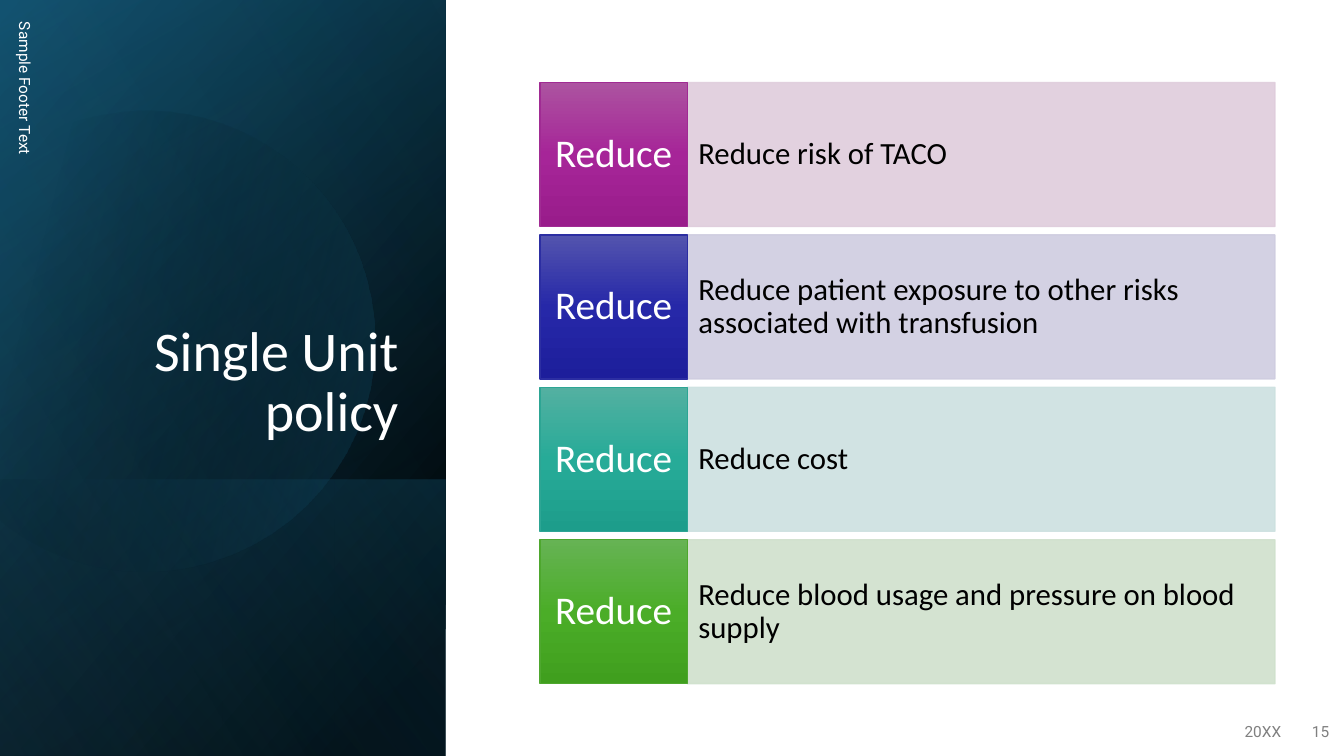
from math import cos, radians, sin

from lxml.etree import SubElement
from pptx import Presentation
from pptx.dml.color import RGBColor
from pptx.enum.shapes import MSO_SHAPE
from pptx.enum.text import MSO_ANCHOR, MSO_AUTO_SIZE, PP_ALIGN
from pptx.oxml.ns import qn
from pptx.util import Cm, Pt

COLORS = {
    "white": "FFFFFF", "black": "000000", "gray": "808080",
    "navy": "104862", "teal": "156082", "sky": "46B1E1",
}

# Text, pale body colour, label line colour, label gradient colours
ROWS = [
    ("Reduce risk of TACO",
     "DFCDDC", "A02B93", ("AC53A0", "A62598", "991C8B")),
    ("Reduce patient exposure to other risks associated with transfusion",
     "CFCDE0", "2C2EA2", ("5354AE", "2628A8", "1D1E9B")),
    ("Reduce cost",
     "CDE1E0", "2DA594", ("53B0A1", "27AB98", "1D9D8B")),
    ("Reduce blood usage and pressure on blood supply",
     "D0E1CD", "4EA72E", ("66B354", "4BAD28", "409F1E")),
]
ROW_TOP, ROW_HEIGHT, ROW_PITCH = 2.08, 3.63, 3.84
LABEL_LEFT, LABEL_WIDTH, BODY_WIDTH = 13.61, 3.71, 14.81

# Each step holds one end point, or two control points and an end point
CIRCLE_START = (3.78, 2.79)
CIRCLE_STEPS = [
    [(6.25, 2.84), (8.51, 4.5), (9.22, 6.99)],
    [(10.11, 10.08), (8.33, 13.28), (5.26, 14.17)],
    [(3.33, 14.73), (1.35, 14.25), (-0.08, 13.06)],
    [(-0.38, 12.78)],
    [(-0.38, 4.45)],
    [(0, 4.09)],
    [(0.58, 3.61), (1.27, 3.25), (2.03, 3.02)],
    [(2.62, 2.87), (3.2, 2.79), CIRCLE_START],
]
CIRCLE_CENTER = (4.03, 8.5)
CIRCLE_TILT = -16.1


def set_alpha(color_element, percent):
    SubElement(color_element, qn("a:alpha")).set("val", str(percent * 1000))


def fill_gradient(shape, stops, angle):
    """Fill with (position, colour, opacity) stops at a clockwise angle."""
    shape.fill.gradient()
    shape.fill.gradient_angle = (360 - angle) % 360
    stop_list = next(shape.element.spPr.iter(qn("a:gsLst")))
    for old_stop in list(stop_list):
        stop_list.remove(old_stop)
    for position, color, opacity in stops:
        stop = SubElement(stop_list, qn("a:gs"))
        stop.set("pos", str(position * 1000))
        color_element = SubElement(stop, qn("a:srgbClr"))
        color_element.set("val", color)
        if opacity < 100:
            set_alpha(color_element, opacity)


def write_text(shape, text, *, size, color, font="Calibri", align=PP_ALIGN.LEFT,
               anchor=MSO_ANCHOR.MIDDLE, insets=(0.25, 0.13), line_spacing=None):
    frame = shape.text_frame
    frame.word_wrap = True
    frame.auto_size = MSO_AUTO_SIZE.NONE
    frame.vertical_anchor = anchor
    frame.margin_left = frame.margin_right = Cm(insets[0])
    frame.margin_top = frame.margin_bottom = Cm(insets[1])
    para = frame.paragraphs[0]
    para.alignment = align
    para.line_spacing = line_spacing
    span = para.add_run()
    span.text = text
    span.font.size = Pt(size)
    span.font.name = font
    span.font.color.rgb = RGBColor.from_string(color)


def add_rectangle(page, left, top, width, height):
    box = page.shapes.add_shape(
        MSO_SHAPE.RECTANGLE, Cm(left), Cm(top), Cm(width), Cm(height))
    box.shadow.inherit = False
    return box


def add_panel(page, left, top, width, height, stops, angle):
    """Add a borderless gradient panel, mirrored and turned a quarter."""
    panel = add_rectangle(page, left, top, width, height)
    panel.rotation = 90
    panel.element.spPr.xfrm.set("flipH", "1")
    panel.line.fill.background()
    fill_gradient(panel, stops, angle)


def circle_points():
    points = [CIRCLE_START]
    for step in CIRCLE_STEPS:
        if len(step) == 1:
            points += step
            continue
        curve = [points[-1], *step]
        for index in range(1, 17):
            t = index / 16
            weights = ((1 - t) ** 3, 3 * t * (1 - t) ** 2, 3 * t * t * (1 - t), t ** 3)
            points.append(tuple(sum(weight * point[axis] for weight, point
                                    in zip(weights, curve)) for axis in (0, 1)))
    return points


def turn(point, center, degrees):
    angle = radians(degrees)
    x, y = point[0] - center[0], point[1] - center[1]
    return (Cm(center[0] + x * cos(angle) - y * sin(angle)),
            Cm(center[1] + x * sin(angle) + y * cos(angle)))


def add_circle(page):
    points = [turn(point, CIRCLE_CENTER, -CIRCLE_TILT) for point in circle_points()]
    builder = page.shapes.build_freeform(*points[0])
    builder.add_line_segments(points[1:], close=True)
    circle = builder.convert_to_shape()
    circle.rotation = CIRCLE_TILT
    circle.shadow.inherit = False
    circle.line.fill.background()
    fill_gradient(circle, [(29, COLORS["black"], 0), (100, COLORS["teal"], 43)], 30)


def add_side_panel(page):
    black, teal = COLORS["black"], COLORS["teal"]
    full = (-3.91, 3.91, 19.05, 11.23)
    add_panel(page, *full, [(8, black, 100), (100, COLORS["navy"], 100)], 50)
    add_panel(page, *full, [(0, black, 0), (99, teal, 46)], 30)
    add_panel(page, 2.13, 9.96, 6.96, 11.23, [(2, teal, 29), (100, black, 30)], 130)
    add_circle(page)
    add_panel(page, *full, [(0, black, 0), (99, COLORS["sky"], 11)], 120)


def add_title(page):
    title = page.shapes.title
    title.left, title.top, title.width, title.height = (
        Cm(1.63), Cm(4.67), Cm(8.66), Cm(6.65))
    write_text(title, "Single Unit policy", size=40, color=COLORS["white"],
               align=PP_ALIGN.RIGHT, anchor=MSO_ANCHOR.BOTTOM, line_spacing=0.9)
    page.shapes._spTree.append(title.element)  # bring in front of the panel


def add_footer(page, text, left, top, width, color, align=PP_ALIGN.RIGHT, rotation=0):
    box = page.shapes.add_textbox(Cm(left), Cm(top), Cm(width), Cm(1.02))
    box.rotation = rotation
    write_text(box, text, size=11, color=color, font="Roboto", align=align)


def add_row(page, top, text, pale, edge, shades):
    body = add_rectangle(page, LABEL_LEFT + LABEL_WIDTH, top, BODY_WIDTH, ROW_HEIGHT)
    body.fill.solid()
    body.fill.fore_color.rgb = RGBColor.from_string(pale)
    body.line.color.rgb = RGBColor.from_string(pale)
    body.line.width = Pt(1)
    for color_element in body.element.spPr.iter(qn("a:srgbClr")):
        set_alpha(color_element, 90)
    write_text(body, text, size=22, color=COLORS["black"],
               insets=(0.28, 0.91), line_spacing=0.9)

    label = add_rectangle(page, LABEL_LEFT, top, LABEL_WIDTH, ROW_HEIGHT)
    fill_gradient(label, [(50 * i, shade, 100) for i, shade in enumerate(shades)], 90)
    label.line.color.rgb = RGBColor.from_string(edge)
    label.line.width = Pt(1)
    write_text(label, "Reduce", size=28, color=COLORS["white"],
               align=PP_ALIGN.CENTER, insets=(0.2, 0.36), line_spacing=0.9)


def main():
    deck = Presentation()
    deck.slide_width, deck.slide_height = Cm(33.87), Cm(19.05)
    page = deck.slides.add_slide(deck.slide_layouts[5])
    add_side_panel(page)
    add_title(page)
    add_footer(page, "Sample Footer Text", -5.08, 5.51, 11.43, COLORS["white"],
               align=PP_ALIGN.LEFT, rotation=90)
    add_footer(page, "20XX", 24.92, 17.93, 7.62, COLORS["gray"])
    add_footer(page, "15", 32.51, 17.93, 1.24, COLORS["gray"])
    for index, row in enumerate(ROWS):
        add_row(page, ROW_TOP + index * ROW_PITCH, *row)
    deck.save("out.pptx")


if __name__ == "__main__":
    main()
